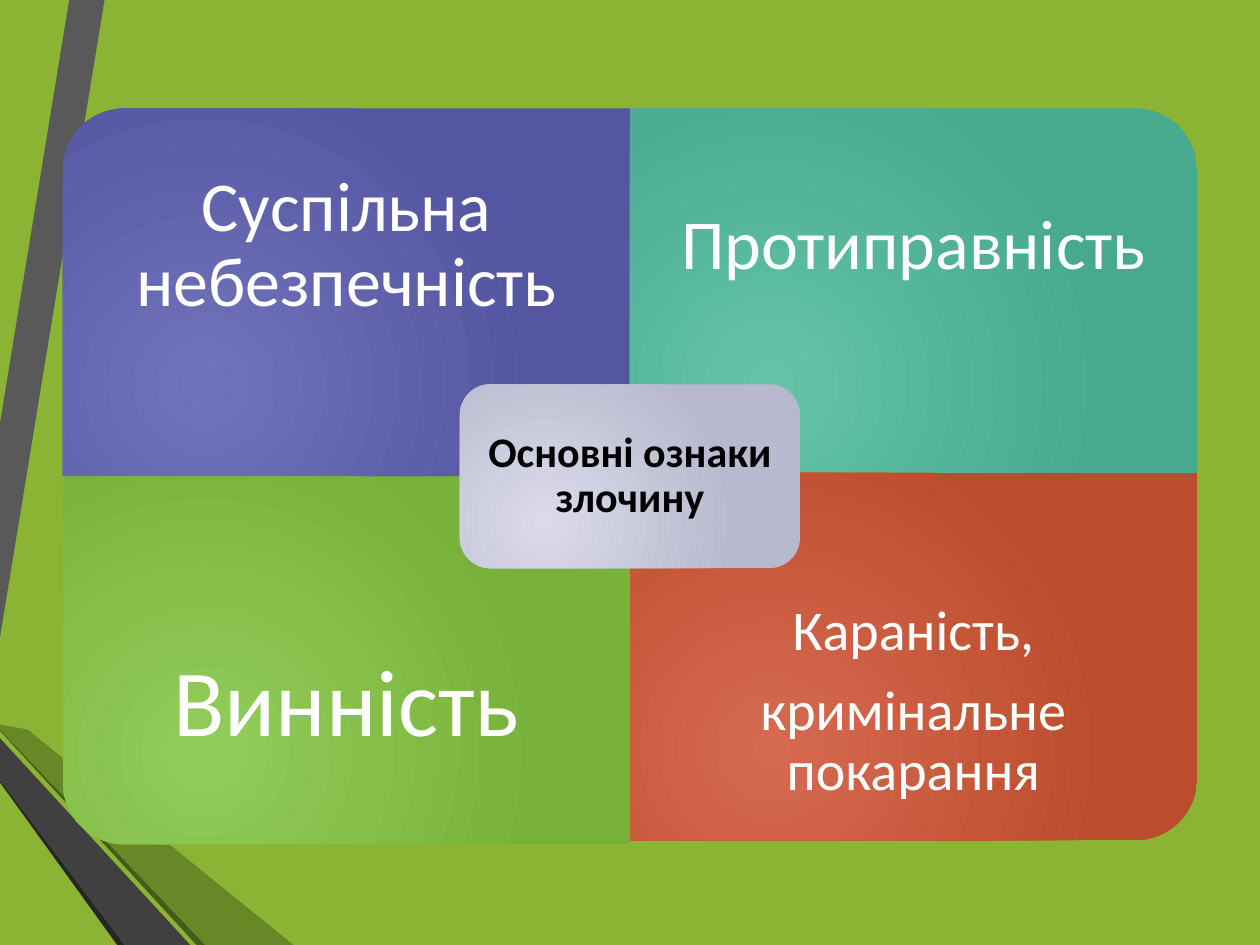
"""Build a slide with four crime features around a central label."""
import pptx
import pptx.dml.color
import pptx.enum.shapes
import pptx.enum.text
import pptx.oxml
import pptx.oxml.ns
import pptx.util

Inches = pptx.util.Inches
Shapes = pptx.enum.shapes.MSO_SHAPE

COLORS = {
    "background": "8BB434", "white": "FFFFFF", "black": "000000",
    "gray": "595959", "charcoal": "262626", "slate": "404040",
    "moss": "465A1A", "olive": "688727",
    "violet": ("7173BA", "5456A2"), "teal": ("65C3A7", "47A98E"),
    "green": ("92CC5A", "79B23A"), "red": ("D66A51", "BC4D2C"),
    "lavender": ("DADAE9", "B8B9CE"),
}

RIBBONS = [
    ("gray", [(0.83, 0), (0.55, 0), (0, 3.36), (0, 5.06)]),
    ("charcoal", [(0, 6.19), (0, 6.21), (0.93, 7.5), (0.99, 7.5)]),
    ("moss", [(0, 5.79), (0, 5.8), (1.56, 7.5), (1.63, 7.5)]),
    ("olive", [(0, 5.79), (1.63, 7.5), (2.33, 7.5), (0.22, 5.79), (0, 5.75)]),
    ("slate", [(0, 6.19), (0.99, 7.5), (1.51, 7.5), (0, 5.86)]),
]

CARD_WIDTH, CARD_HEIGHT, TEXT_HEIGHT = 4.5, 2.92, 2.19
CARDS = [
    (0.5, 0.86, 270, "violet", 0, 0.31, 40, ["Суспільна небезпечність"]),
    (5, 0.86, 0, "teal", 0, 0.31, 40, ["Протиправність"]),
    (0.5, 3.78, 180, "green", 0.73, 0.42, 54, ["Винність"]),
    (5, 3.75, 90, "red", 0.73, 0.25, 32, ["Караність,", "кримінальне покарання"]),
]


def rgb(name):
    """Return the named palette entry as a color."""
    return pptx.dml.color.RGBColor.from_string(COLORS[name])


class SlideBuilder:
    """Hold the text style and the current slide."""

    font = "Calibri"
    line_spacing = 0.9
    space_ratio = 0.35

    def __init__(self, page):
        """Keep the page and paint its background."""
        self.page = page
        page.background.fill.solid()
        page.background.fill.fore_color.rgb = rgb("background")

    def ribbon(self, color, points):
        """Draw a flat closed outline."""
        builder = self.page.shapes.build_freeform(
            Inches(points[0][0]), Inches(points[0][1]), scale=1.0)
        builder.add_line_segments(
            [(Inches(x), Inches(y)) for x, y in points[1:]], close=True)
        shape = builder.convert_to_shape()
        shape.shadow.inherit = False
        shape.fill.solid()
        shape.fill.fore_color.rgb = rgb(color)
        shape.line.fill.background()

    def panel(self, kind, left, top, width, height, color, rotation=0):
        """Draw a radially shaded shape that covers the given area once rotated."""
        if rotation % 180:
            left, top = left + (width - height) / 2, top + (height - width) / 2
            width, height = height, width
        shape = self.page.shapes.add_shape(
            kind, Inches(left), Inches(top), Inches(width), Inches(height))
        shape.rotation = rotation
        shape.shadow.inherit = False
        shape.line.fill.background()
        shape.fill.gradient()
        for stop, value in zip(shape.fill.gradient_stops, COLORS[color]):
            stop.color.rgb = pptx.dml.color.RGBColor.from_string(value)
        qn = pptx.oxml.ns.qn
        gradient = shape._element.spPr.find(qn("a:gradFill"))
        gradient.set("rotWithShape", "0")
        gradient.replace(gradient.find(qn("a:lin")), pptx.oxml.parse_xml(
            f'<a:path {pptx.oxml.ns.nsdecls("a")} path="circle">'
            '<a:fillToRect l="50000" t="100000" r="100000" b="50000"/></a:path>'))

    def text(self, left, top, width, height, lines, inset, size, color="white", bold=False):
        """Add centered paragraphs in a box with equal insets."""
        box = self.page.shapes.add_textbox(
            Inches(left), Inches(top), Inches(width), Inches(height))
        frame = box.text_frame
        frame.text = "\n".join(lines)
        frame_format = {"word_wrap": True, "vertical_anchor": pptx.enum.text.MSO_ANCHOR.MIDDLE}
        for side in ("left", "top", "right", "bottom"):
            frame_format[f"margin_{side}"] = Inches(inset)
        self.apply(frame, frame_format)
        for para in frame.paragraphs:
            self.apply(para, {
                "alignment": pptx.enum.text.PP_ALIGN.CENTER,
                "line_spacing": self.line_spacing,
                "space_after": pptx.util.Pt(size * self.space_ratio),
            })
            for span in para.runs:
                self.apply(span.font, {
                    "name": self.font, "size": pptx.util.Pt(size), "bold": bold})
                span.font.color.rgb = rgb(color)

    @staticmethod
    def apply(target, values):
        """Set each named format value on the target."""
        for name, value in values.items():
            setattr(target, name, value)


def main():
    """Create and save the deck."""
    deck = pptx.Presentation()
    deck.slide_width, deck.slide_height = Inches(10), Inches(7.5)
    slide = SlideBuilder(deck.slides.add_slide(deck.slide_layouts[6]))
    for color, points in RIBBONS:
        slide.ribbon(color, points)
    for left, top, rotation, color, offset, inset, size, lines in CARDS:
        slide.panel(Shapes.ROUND_1_RECTANGLE, left, top, CARD_WIDTH, CARD_HEIGHT, color, rotation)
        slide.text(left, top + offset, CARD_WIDTH, TEXT_HEIGHT, lines, inset, size)
    slide.panel(Shapes.ROUNDED_RECTANGLE, 3.65, 3.05, 2.7, 1.46, "lavender")
    slide.text(3.72, 3.12, 2.56, 1.32, ["Основні ознаки злочину"], 0.1, 24, "black", True)
    deck.save("out.pptx")


if __name__ == "__main__":
    main()
